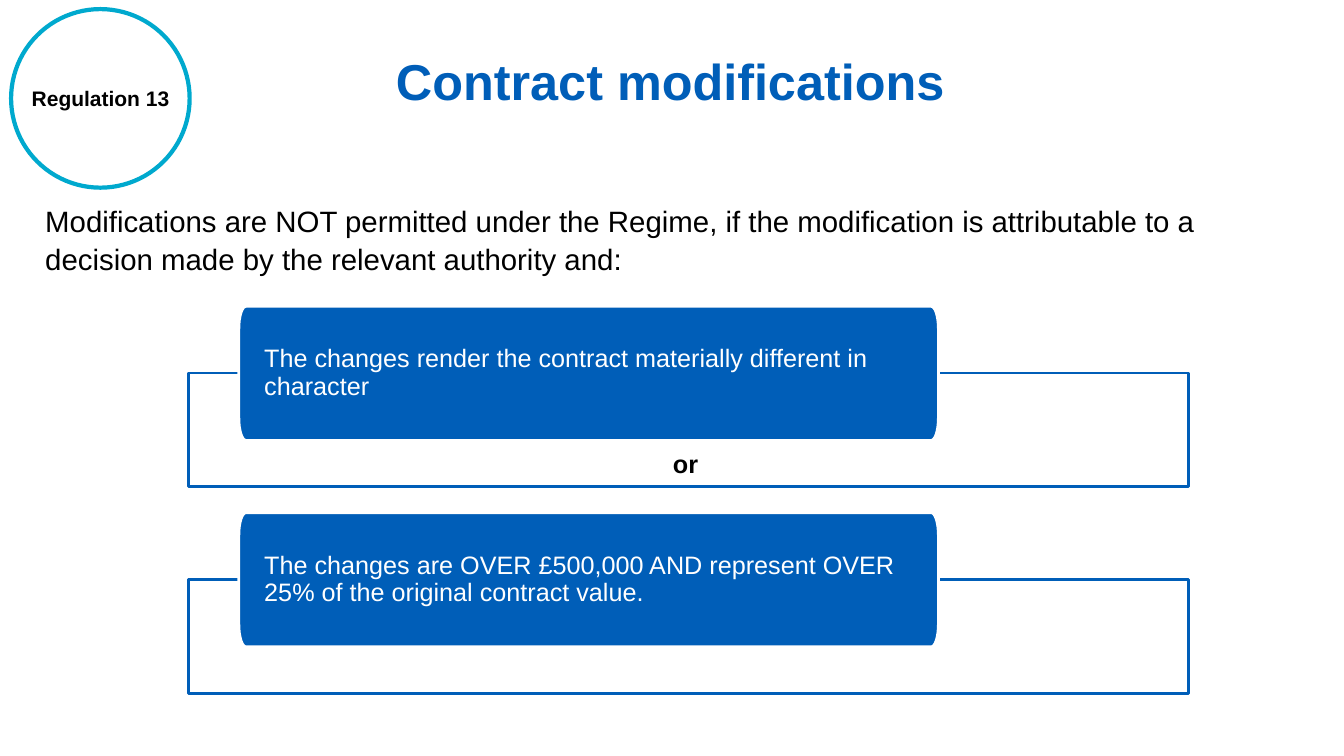
from math import cos, pi, sin

from pptx import Presentation
from pptx.dml.color import RGBColor as Rgb
from pptx.enum.shapes import MSO_SHAPE as Preset
from pptx.enum.text import MSO_ANCHOR as Anchor, PP_ALIGN as Align
from pptx.oxml.ns import qn
from pptx.util import Cm, Pt
from lxml.etree import SubElement

COLOURS = {"blue": "005EB8", "aqua": "00A9CE", "white": "FFFFFF", "black": "000000"}
FONT = "Arial"
CORNER_STEPS = 8
CONDITIONS = [
    "The changes render the contract materially different in character",
    "The changes are OVER £500,000 AND represent OVER 25% of the original contract value.",
]
CONDITION_PITCH = 5.2


def colour(name):
    return Rgb.from_string(COLOURS[name])


def write_text(shape, text, size=18, ink="black", bold=False, align=Align.LEFT,
               anchor=Anchor.TOP, wrap=True, spacing=1.0, insets=(0.25, 0.13)):
    frame = shape.text_frame
    frame.word_wrap = wrap
    frame.vertical_anchor = anchor
    frame.margin_left = frame.margin_right = Cm(insets[0])
    frame.margin_top = frame.margin_bottom = Cm(insets[1])
    para = frame.paragraphs[0]
    para.alignment = align
    para.line_spacing = spacing
    span = para.add_run()
    span.text = text
    span.font.name = FONT
    span.font.size = Pt(size)
    span.font.bold = bold
    span.font.color.rgb = colour(ink)


class SlideBuilder:
    def __init__(self, page):
        self.shapes = page.shapes

    def paint(self, shape, fill, line, width):
        shape.shadow.inherit = False
        shape.fill.solid()
        shape.fill.fore_color.rgb = colour(fill)
        shape.line.color.rgb = colour(line)
        shape.line.width = Pt(width)
        return shape

    def label(self, left, top, width, height, text, **style):
        box = self.shapes.add_textbox(Cm(left), Cm(top), Cm(width), Cm(height))
        write_text(box, text, **style)

    def outline(self, preset, left, top, width, height, line, weight, opacity=100):
        shape = self.shapes.add_shape(preset, Cm(left), Cm(top), Cm(width), Cm(height))
        self.paint(shape, "white", line, weight)
        if opacity < 100:
            fill = shape.element.spPr.find(qn("a:solidFill"))
            SubElement(fill[0], qn("a:alpha")).set("val", str(opacity * 1000))

    def card(self, left, top, width, height, text, radius_x=0.18, radius_y=0.56):
        right, bottom = left + width, top + height
        centres = [
            (right - radius_x, bottom - radius_y),
            (left + radius_x, bottom - radius_y),
            (left + radius_x, top + radius_y),
            (right - radius_x, top + radius_y),
        ]
        points = []
        for quarter, (x, y) in enumerate(centres):
            for step in range(CORNER_STEPS + 1):
                angle = (quarter + step / CORNER_STEPS) * pi / 2
                points.append((Cm(x + radius_x * cos(angle)),
                               Cm(y + radius_y * sin(angle))))
        builder = self.shapes.build_freeform(*points[0])
        builder.add_line_segments(points[1:], close=True)
        shape = self.paint(builder.convert_to_shape(), "blue", "white", 2)
        write_text(shape, text, ink="white", anchor=Anchor.MIDDLE,
                   spacing=0.9, insets=(0.64, 0.05))


def main():
    deck = Presentation()
    deck.slide_width, deck.slide_height = Cm(33.87), Cm(19.05)
    page = deck.slides.add_slide(deck.slide_layouts[6])
    builder = SlideBuilder(page)

    builder.label(9.73, 0.13, 14.4, 3.81, "Contract modifications",
                  size=36, ink="blue", bold=True, anchor=Anchor.MIDDLE)
    builder.label(0.89, 4.93, 32.1, 2.21,
                  "Modifications are NOT permitted under the Regime, if the modification "
                  "is attributable to a decision made by the relevant authority and:",
                  size=21, spacing=1.07)
    builder.outline(Preset.OVAL, 0.28, 0.23, 4.5, 4.5, "aqua", 3)
    builder.label(0.53, 2.03, 4.01, 0.89, "Regulation 13",
                  size=15, bold=True, align=Align.CENTER, wrap=False)

    for index, condition in enumerate(CONDITIONS):
        offset = index * CONDITION_PITCH
        builder.outline(Preset.RECTANGLE, 4.75, 9.4 + offset, 25.2, 2.87,
                        "blue", 2, opacity=90)
        builder.card(6.02, 7.72 + offset, 17.63, 3.38, condition)
    builder.label(16.71, 11.18, 1.32, 1.02, "or", bold=True, wrap=False)

    deck.save("out.pptx")


if __name__ == "__main__":
    main()
